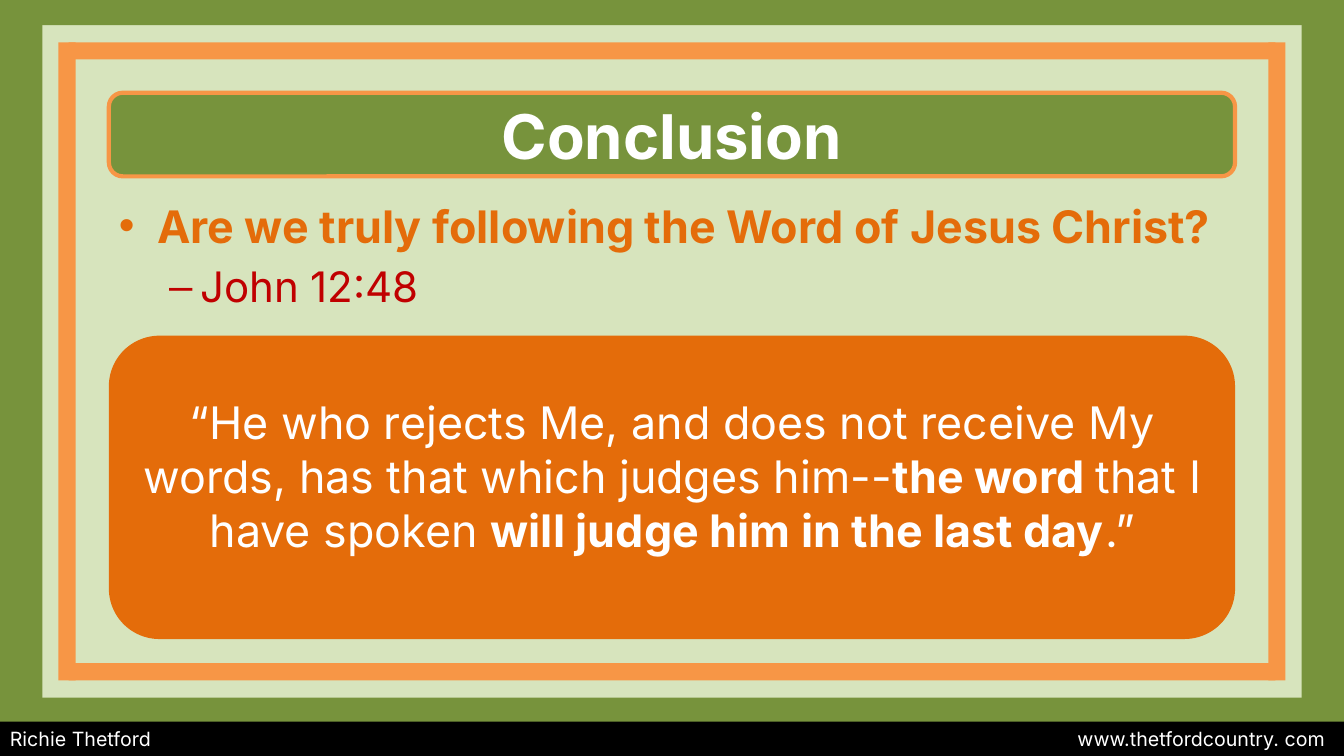
from pptx import Presentation
from pptx.dml.color import RGBColor
from pptx.enum import shapes, text
from pptx.oxml import parse_xml
from pptx.oxml.ns import nsdecls
from pptx.util import Inches, Pt

# Content
TITLE = "Conclusion"
POINTS = [  # text, bullet, left margin, hanging indent, space before, style
    ("Are we truly following the Word of Jesus Christ?", "•", 0.38, 0.38, 0,
     dict(size="point", color="deep", bold=True)),
    ("John 12:48", "–", 0.81, 0.31, 6, dict(size="reference", color="red")),
]
QUOTE = [  # text, bold
    ("“He who rejects Me, and does not receive My words, has that which judges him--", False),
    ("the word ", True),
    ("that I have spoken ", False),
    ("will judge him in the last day", True),
    (".”", False),
]
AUTHOR, SITE = "Richie Thetford", "www.thetfordcountry. com"

THEME = dict(
    font="Inter",
    colors=dict(paper="D7E4BD", green="77933C", orange="F79646", deep="E46C0A",
                red="C00000", white="FFFFFF", black="000000"),
    sizes=dict(title=44, point=32, reference=30, footer=14),
)

# Layout, in inches
WIDTH, HEIGHT = 13.33, 7.5
LEFT, CONTENT_W = 1.08, 11.17
FOOTER = (0, 7.16, WIDTH, 0.34)
FRAMES = [  # colour, left, top, right, bottom, side width, band height, band inset, side end
    ("orange", 0.58, 0.42, 12.75, 6.75, 0.17, 0.17, 0.1, 6.75),
    ("green", 0, 0, WIDTH, 7.17, 0.42, 0.25, 0.25, HEIGHT),
]

prs = Presentation()
prs.slide_width, prs.slide_height = Inches(WIDTH), Inches(HEIGHT)
slide = prs.slides.add_slide(prs.slide_layouts[6])


def color(name):
    return RGBColor.from_string(THEME["colors"][name])


def add_block(box, fill, kind=shapes.MSO_SHAPE.RECTANGLE, line=None):
    sp = slide.shapes.add_shape(kind, *map(Inches, box))
    sp.shadow.inherit = False
    sp.fill.solid()
    sp.fill.fore_color.rgb = color(fill)
    if line:
        sp.line.color.rgb = color(line)
        sp.line.width = Pt(3)
    else:
        sp.line.fill.background()
    return sp


def add_box(box):
    return slide.shapes.add_textbox(*map(Inches, box))


def prepare(sp, anchor=text.MSO_ANCHOR.TOP):
    tf = sp.text_frame
    tf.word_wrap = True
    tf.vertical_anchor = anchor
    return tf


def write(p, words, size="point", color_name="white", bold=False, align=text.PP_ALIGN.LEFT):
    p.alignment = align
    r = p.add_run()
    r.text = words
    r.font.name = THEME["font"]
    r.font.size = Pt(THEME["sizes"][size])
    r.font.bold = bold
    r.font.color.rgb = color(color_name)


def add_bullet(p, mark, margin, hang):
    pPr = p._p.get_or_add_pPr()
    pPr.set("marL", str(Inches(margin)))
    pPr.set("indent", str(-Inches(hang)))
    for xml in ('<a:buFont {} typeface="Arial"/>', '<a:buChar {} char="%s"/>' % mark):
        pPr.append(parse_xml(xml.format(nsdecls("a"))))


def add_frame(fill, left, top, right, bottom, side, band, inset, side_end):
    for x in (left, right - side):
        add_block((x, top, side, side_end - top), fill)
    for y in (top, bottom - band):
        add_block((left + inset, y, right - left - 2 * inset, band), fill)


# Background
slide.background.fill.solid()
slide.background.fill.fore_color.rgb = color("paper")

# Bullet points
tf = prepare(add_box((LEFT, 1.92, CONTENT_W, 1.3)))
for i, (words, mark, margin, hang, before, style) in enumerate(POINTS):
    p = tf.add_paragraph() if i else tf.paragraphs[0]
    p.space_before = Pt(before)
    write(p, words, style["size"], style["color"], style.get("bold", False))
    add_bullet(p, mark, margin, hang)

# Quotation panel
add_block((LEFT, 3.33, CONTENT_W, 3.01), "deep", shapes.MSO_SHAPE.ROUNDED_RECTANGLE)
p = prepare(add_box((1.17, 3.87, 11, 1.72))).paragraphs[0]
for words, bold in QUOTE:
    write(p, words, bold=bold, align=text.PP_ALIGN.CENTER)

# Borders
for frame in FRAMES:
    add_frame(*frame)

# Footer
bar = add_block(FOOTER, "black")
site = add_box((9.24, FOOTER[1], 4, FOOTER[3]))
for sp, words, align in ((bar, AUTHOR, text.PP_ALIGN.LEFT), (site, SITE, text.PP_ALIGN.RIGHT)):
    tf = prepare(sp, text.MSO_ANCHOR.MIDDLE)
    write(tf.paragraphs[0], words, "footer", align=align)

# Title
banner = add_block((LEFT, 0.92, CONTENT_W, 0.83), "green",
                   shapes.MSO_SHAPE.ROUNDED_RECTANGLE, line="orange")
tf = prepare(banner, text.MSO_ANCHOR.MIDDLE)
write(tf.paragraphs[0], TITLE, "title", bold=True, align=text.PP_ALIGN.CENTER)

prs.save("out.pptx")
